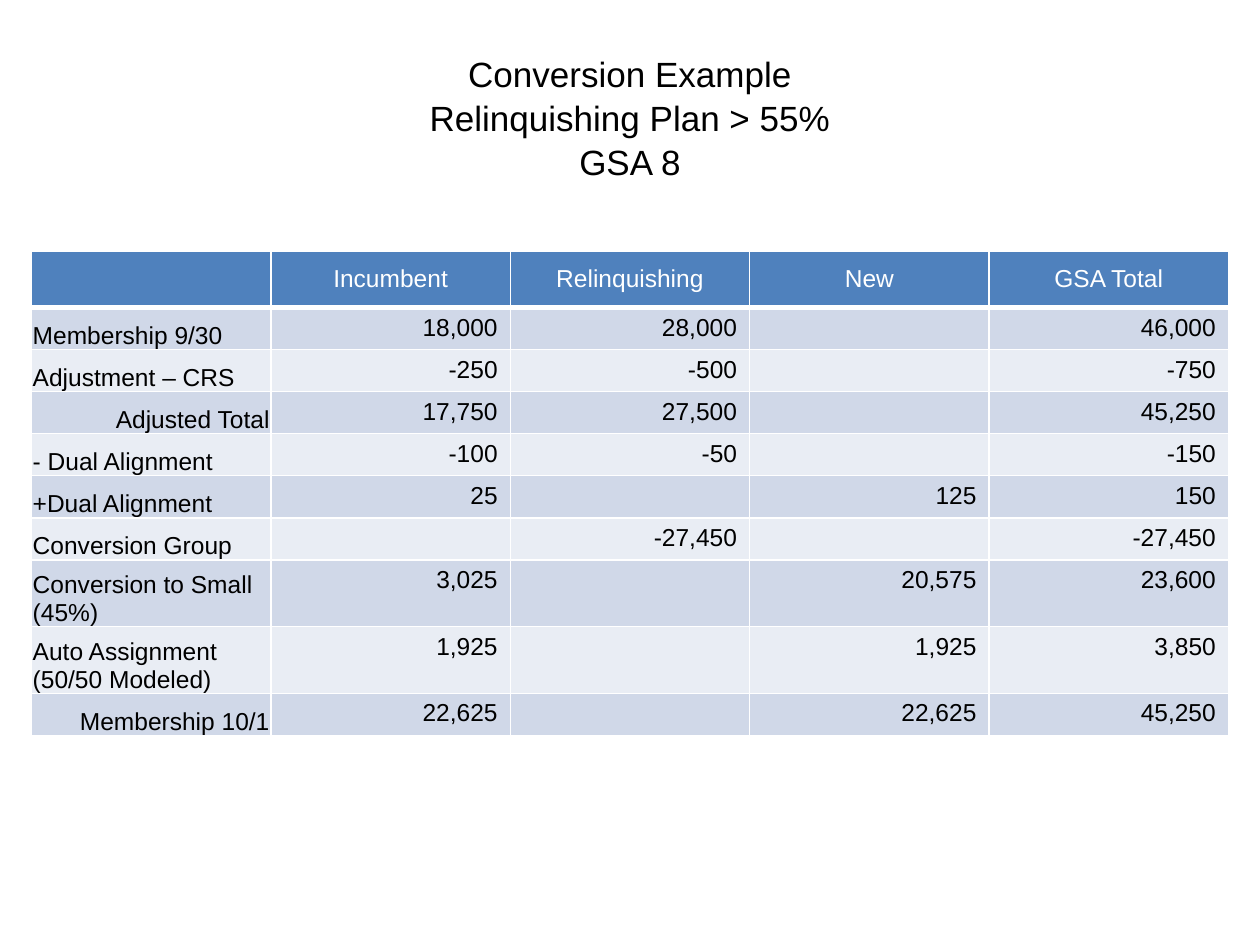
import lxml.etree
import pptx
import pptx.dml.color
import pptx.enum.text
import pptx.oxml.ns
import pptx.util

Inches = pptx.util.Inches
Pt = pptx.util.Pt
Align = pptx.enum.text.PP_ALIGN
Anchor = pptx.enum.text.MSO_ANCHOR

COLORS = {
    "text": "000000",
    "header": "4F81BD",
    "white": "FFFFFF",
    "odd": "D0D8E8",
    "even": "E9EDF4",
}

TITLE = "Conversion Example\vRelinquishing Plan > 55%\vGSA 8"
HEADERS = ["", "Incumbent", "Relinquishing", "New", "GSA Total"]
MEMBERSHIP = [
    ["Membership 9/30", "18,000", "28,000", "", "46,000"],
    ["Adjustment – CRS", "-250", "-500", "", "-750"],
    ["Adjusted Total", "17,750", "27,500", "", "45,250"],
    ["- Dual Alignment", "-100", "-50", "", "-150"],
    ["+Dual Alignment", "25", "", "125", "150"],
    ["Conversion Group", "", "-27,450", "", "-27,450"],
    ["Conversion to Small (45%)", "3,025", "", "20,575", "23,600"],
    ["Auto Assignment (50/50 Modeled)", "1,925", "", "1,925", "3,850"],
    ["Membership 10/1", "22,625", "", "22,625", "45,250"],
]
TOTAL_LABELS = {"Adjusted Total", "Membership 10/1"}
ROW_HEIGHTS = [0.45] + [0.32] * 6 + [0.53] * 2 + [0.32]

# Cell formats by role
HEADER_FORMAT = {"vertical_anchor": Anchor.MIDDLE}
NUMBER_FORMAT = {"vertical_anchor": Anchor.TOP}
LABEL_FORMAT = {
    "vertical_anchor": Anchor.BOTTOM,
    "margin_left": Inches(0.01),
    "margin_right": Inches(0.01),
    "margin_top": Inches(0.01),
    "margin_bottom": 0,
}


def set_attributes(target, values):
    for name, value in values.items():
        setattr(target, name, value)


class SlideBuilder:
    """Holds the style and the current slide."""

    font_name = "Arial"

    def __init__(self, slide):
        self.slide = slide

    def fill_paragraph(self, paragraph, text, size, color, alignment):
        paragraph.alignment = alignment
        if not text:
            # An empty cell takes its line height from the end mark
            lxml.etree.SubElement(
                paragraph._p, pptx.oxml.ns.qn("a:endParaRPr"), sz=str(size * 100)
            )
            return
        paragraph.text = text
        for run in paragraph.runs:
            set_attributes(
                run.font, {"name": self.font_name, "size": Pt(size), "bold": False}
            )
            run.font.color.rgb = pptx.dml.color.RGBColor.from_string(COLORS[color])

    def add_title(self, text, left, top, width, height):
        box = self.slide.shapes.add_textbox(
            Inches(left), Inches(top), Inches(width), Inches(height)
        )
        frame = box.text_frame
        set_attributes(frame, {"word_wrap": True, "vertical_anchor": Anchor.MIDDLE})
        paragraph = frame.paragraphs[0]
        self.fill_paragraph(paragraph, text, 20, "text", Align.CENTER)
        paragraph.line_spacing = 1.04

    def add_borders(self, cell, widths):
        properties = cell._tc.get_or_add_tcPr()
        for side, width in widths.items():
            line = lxml.etree.SubElement(
                properties, pptx.oxml.ns.qn(f"a:ln{side}"), w=str(int(Pt(width)))
            )
            fill = lxml.etree.SubElement(line, pptx.oxml.ns.qn("a:solidFill"))
            lxml.etree.SubElement(
                fill, pptx.oxml.ns.qn("a:srgbClr"), val=COLORS["white"]
            )

    def style_cell(self, cell, text, row, column):
        fill, color = ("odd" if row % 2 else "even"), "text"
        if row == 0:
            cell_format, alignment = HEADER_FORMAT, Align.CENTER
            fill, color = "header", "white"
        elif column == 0:
            cell_format = LABEL_FORMAT
            alignment = Align.RIGHT if text in TOTAL_LABELS else Align.LEFT
        else:
            cell_format, alignment = NUMBER_FORMAT, Align.RIGHT
        set_attributes(cell, cell_format)
        # A thick rule separates the header from the body
        self.add_borders(
            cell,
            {"L": 1, "R": 1, "T": 3 if row == 1 else 1, "B": 3 if row == 0 else 1},
        )
        cell.fill.solid()
        cell.fill.fore_color.rgb = pptx.dml.color.RGBColor.from_string(COLORS[fill])
        self.fill_paragraph(
            cell.text_frame.paragraphs[0], text, 14, color, alignment
        )

    def add_table(self, rows, row_heights, left, top, width):
        table = self.slide.shapes.add_table(
            len(rows), len(rows[0]), Inches(left), Inches(top),
            Inches(width), Inches(sum(row_heights)),
        ).table
        for column in table.columns:
            column.width = Inches(width / len(rows[0]))
        for row, texts in enumerate(rows):
            table.rows[row].height = Inches(row_heights[row])
            for column, text in enumerate(texts):
                self.style_cell(table.cell(row, column), text, row, column)


def main():
    presentation = pptx.Presentation()
    presentation.slide_width = Inches(10)
    presentation.slide_height = Inches(7.5)
    builder = SlideBuilder(presentation.slides.add_slide(presentation.slide_layouts[6]))

    # Title
    builder.add_title(TITLE, 0.25, 0.3, 9.5, 1.25)

    # Membership table
    builder.add_table([HEADERS] + MEMBERSHIP, ROW_HEIGHTS, 0.25, 1.99, 9.5)

    presentation.save("out.pptx")


if __name__ == "__main__":
    main()
